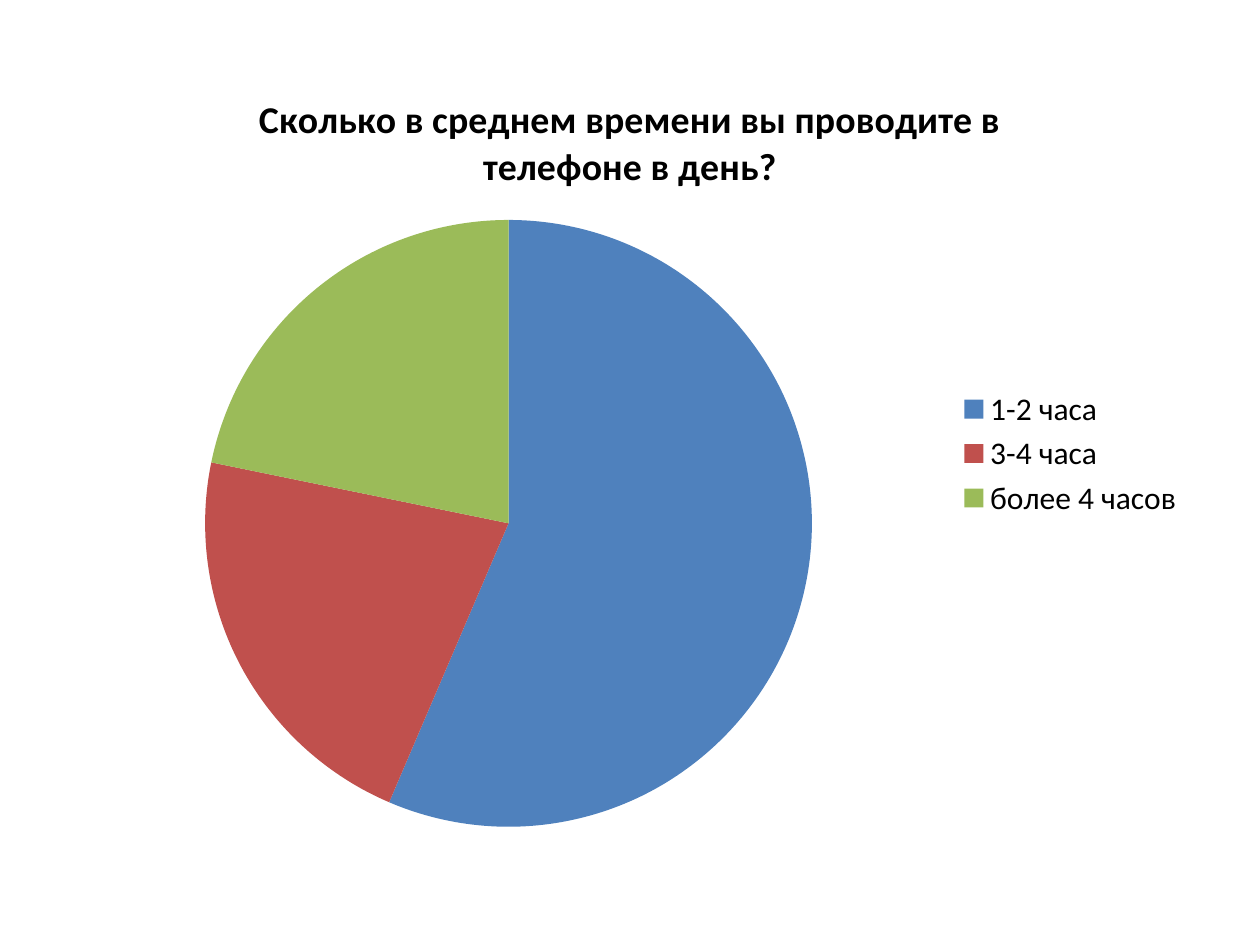
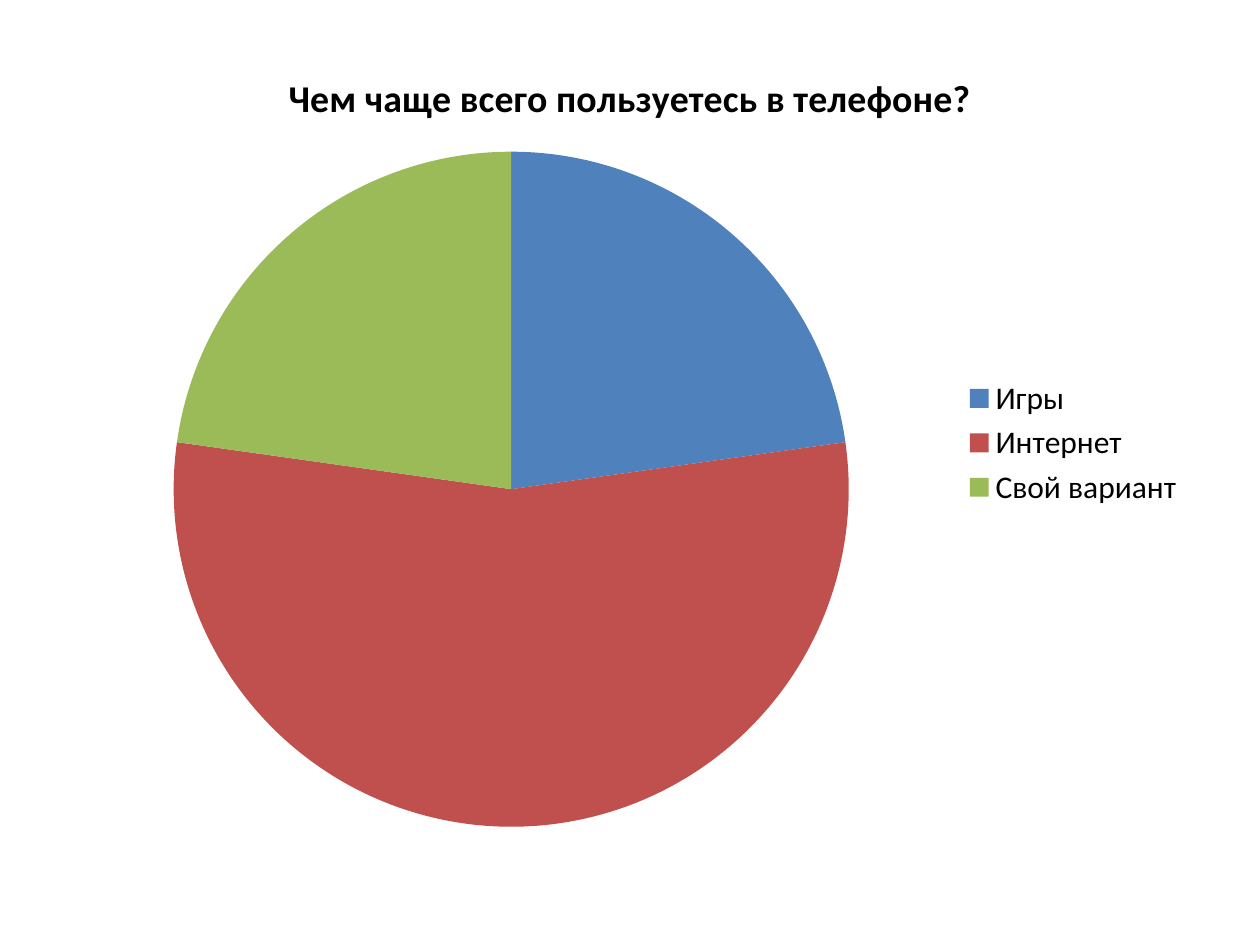
from pptx import Presentation
from pptx.chart.data import CategoryChartData
from pptx.dml.color import RGBColor
from pptx.enum.chart import XL_CHART_TYPE, XL_LEGEND_POSITION
from pptx.util import Pt

PIE = XL_CHART_TYPE.PIE
LEGEND_RIGHT = XL_LEGEND_POSITION.RIGHT

SURVEY = [
    {
        "question": "Сколько в среднем времени вы проводите в телефоне в день?",
        "answers": {"1-2 часа": 57, "3-4 часа": 22, "более 4 часов": 22},
        "top": 36,
    },
    {
        "question": "Чем чаще всего пользуетесь в телефоне?",
        "answers": {"Игры": 23, "Интернет": 55, "Свой вариант": 23},
        "top": 23.76,
    },
]

SLIDE_WIDTH, SLIDE_HEIGHT = 720, 540
MARGIN = 36
CHART_BOTTOM = 482.4
BLANK_LAYOUT = 6
TEXT_COLOR = "000000"
SLICE_COLORS = ["4F81BD", "C0504D", "9BBB59"]
CHART_FONT = {"name": "Calibri", "size": Pt(18), "bold": False}
TITLE_FONT = {"name": "Calibri", "size": Pt(21.6), "bold": True}


def color(hex_string):
    return RGBColor.from_string(hex_string)


def format_font(font, values):
    for attribute, value in values.items():
        setattr(font, attribute, value)
    font.color.rgb = color(TEXT_COLOR)


def add_title(chart, question):
    chart.has_title = True
    chart.chart_title.include_in_layout = False
    text_frame = chart.chart_title.text_frame
    text_frame.text = question
    format_font(text_frame.paragraphs[0].runs[0].font, TITLE_FONT)


def add_legend(chart):
    chart.has_legend = True
    chart.legend.position = LEGEND_RIGHT
    chart.legend.include_in_layout = False


def color_slices(plot):
    plot.vary_by_categories = True
    for index, hex_string in enumerate(SLICE_COLORS):
        fill = plot.series[0].points[index].format.fill
        fill.solid()
        fill.fore_color.rgb = color(hex_string)


def add_survey_slide(presentation, question, answers, top):
    slide = presentation.slides.add_slide(presentation.slide_layouts[BLANK_LAYOUT])
    chart_data = CategoryChartData()
    chart_data.categories = list(answers)
    chart_data.add_series(question, list(answers.values()))
    chart = slide.shapes.add_chart(
        PIE,
        Pt(MARGIN),
        Pt(top),
        Pt(SLIDE_WIDTH - 2 * MARGIN),
        Pt(CHART_BOTTOM - top),
        chart_data,
    ).chart
    format_font(chart.font, CHART_FONT)
    add_title(chart, question)
    add_legend(chart)
    color_slices(chart.plots[0])


def main():
    presentation = Presentation()
    presentation.slide_width = Pt(SLIDE_WIDTH)
    presentation.slide_height = Pt(SLIDE_HEIGHT)
    for entry in SURVEY:
        add_survey_slide(presentation, **entry)
    presentation.save("out.pptx")


if __name__ == "__main__":
    main()
